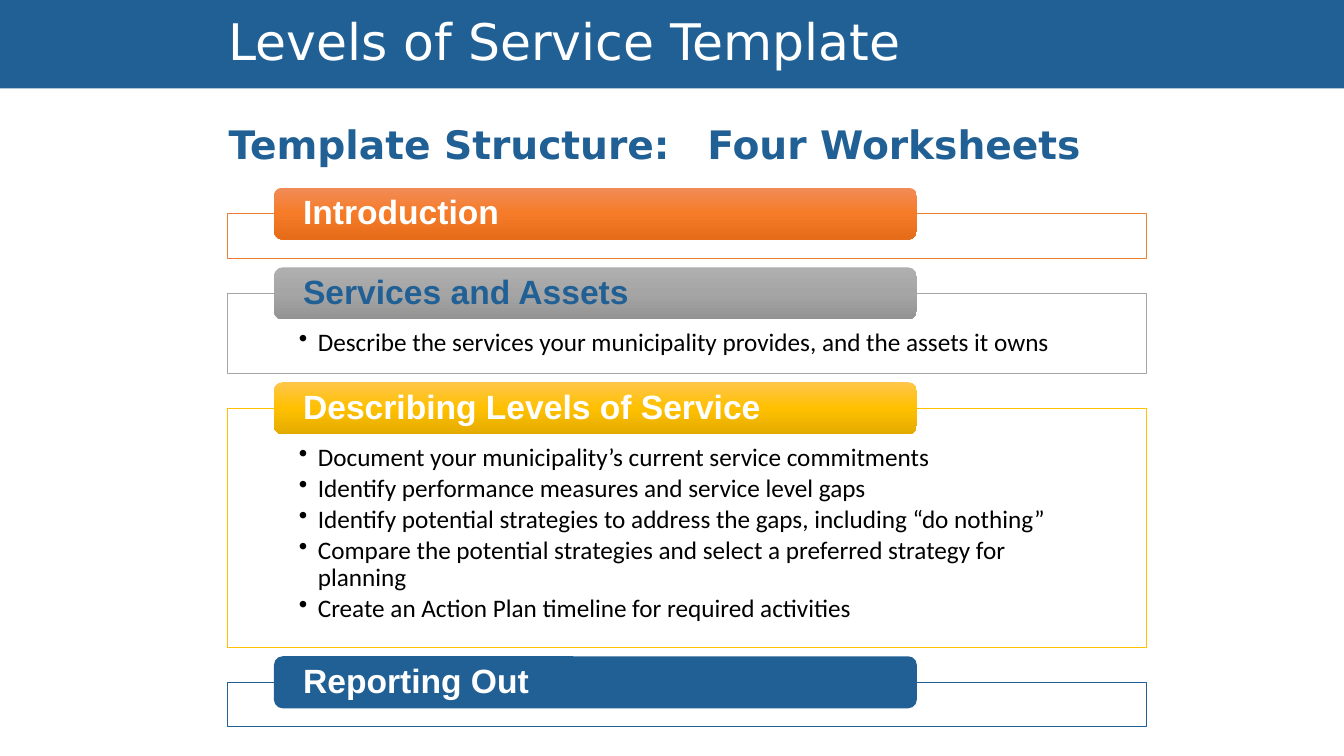
from copy import deepcopy
from dataclasses import dataclass

from lxml.etree import SubElement as Sub
from pptx import Presentation
from pptx.dml.color import RGBColor as RGB
from pptx.enum.shapes import MSO_SHAPE as Kind
from pptx.enum.text import MSO_ANCHOR as Anchor, PP_ALIGN as Align
from pptx.oxml.ns import qn
from pptx.util import Pt


@dataclass(frozen=True)
class Theme:
    blue: str = "216095"
    white: str = "FFFFFF"
    black: str = "000000"
    orange: str = "ED7D31"
    gray: str = "A5A5A5"
    gold: str = "FFC000"
    warm: tuple = ("F18C57", "F67B28", "E56C19")
    steel: tuple = ("AFAFAF", "A5A5A5", "939393")
    amber: tuple = ("FFC64B", "FFC000", "E3AB00")
    flat: tuple = ("216095",)
    title: int = 36
    head: int = 28
    label: int = 24
    body: int = 18
    wide: str = "DejaVu Sans"
    bold: str = "Arial"
    plain: str = "Calibri"


def write(shape, text, *, size, face, color, bold=False, anchor=Anchor.TOP,
          inset=(7.2, 3.6, 7.2, 3.6), after=0, bullet=None, hang=0, tab=None):
    frame = shape.text_frame
    frame.word_wrap = True
    frame.vertical_anchor = anchor
    left, top, right, low = map(Pt, inset)
    frame.margin_left, frame.margin_top = left, top
    frame.margin_right, frame.margin_bottom = right, low
    for i, line in enumerate(text.split("\n")):
        para = frame.add_paragraph() if i else frame.paragraphs[0]
        para.alignment = Align.LEFT
        para.line_spacing = 0.9
        para.space_after = Pt(after)
        props = para._p.get_or_add_pPr()
        if bullet:
            props.set("marL", str(Pt(hang)))
            props.set("indent", str(-Pt(hang)))
            Sub(props, qn("a:buChar"), char=bullet)
        if tab:
            stops = Sub(props, qn("a:tabLst"))
            Sub(stops, qn("a:tab"), pos=str(Pt(tab)), algn="l")
        run = para.add_run()
        run.text = line
        font = run.font
        font.name, font.size, font.bold = face, Pt(size), bold
        font.color.rgb = RGB.from_string(color)


class Deck:
    def __init__(self, theme):
        self.theme = theme
        self.file = Presentation()
        self.file.slide_width, self.file.slide_height = Pt(960), Pt(540)
        self.slide = self.file.slides.add_slide(self.file.slide_layouts[6])

    def shape(self, kind, box, fill, line=None, alpha=None):
        item = self.slide.shapes.add_shape(kind, *map(Pt, box))
        item.shadow.inherit = False
        if len(fill) == 1:
            item.fill.solid()
            item.fill.fore_color.rgb = RGB.from_string(fill[0])
        else:
            self.blend(item, fill)
        if alpha:
            tint = item._element.spPr.find(".//" + qn("a:srgbClr"))
            Sub(tint, qn("a:alpha"), val=str(alpha * 1000))
        if line:
            item.line.color.rgb = RGB.from_string(line)
            item.line.width = Pt(0.5)
        else:
            item.line.fill.background()
        return item

    def blend(self, item, fill):
        item.fill.gradient()
        item.fill.gradient_angle = 270
        stops = item._element.spPr.find(".//" + qn("a:gsLst"))
        stops.insert(1, deepcopy(stops[0]))
        for i, (stop, color) in enumerate(zip(item.fill.gradient_stops, fill)):
            stop.position = i / (len(fill) - 1)
            stop.color.rgb = RGB.from_string(color)

    def text(self, box, words, **form):
        item = self.slide.shapes.add_textbox(*map(Pt, box))
        write(item, words, **form)

    def panel(self, top, high, name, points, line, fill, ink):
        look = self.theme
        frame = self.shape(Kind.RECTANGLE, (162.6, top, 656, high),
                           (look.white,), line, alpha=90)
        if points:
            write(frame, points, size=look.body, face=look.plain,
                  color=look.black, inset=(51, 26, 51, 10),
                  after=2.7, bullet="•", hang=13.5)
        tab = self.shape(Kind.ROUNDED_RECTANGLE,
                         (195.7, top - 18.6, 459.2, 37.2), fill)
        write(tab, name, size=look.label, face=look.bold, color=ink,
              bold=True, anchor=Anchor.MIDDLE, inset=(19, 0, 19, 0))


def main():
    look = Theme()
    deck = Deck(look)
    deck.shape(Kind.RECTANGLE, (0, 0, 960, 63.2), (look.blue,))
    deck.text((156.2, 17, 631.4, 29.5), "Levels of Service Template",
              size=look.title, face=look.wide, color=look.white,
              anchor=Anchor.MIDDLE)
    deck.text((156.2, 86.4, 663, 54.7),
              "Template Structure:\tFour Worksheets", size=look.head,
              face=look.wide, color=look.blue, bold=True, tab=342)
    assets = ("Describe the services your municipality provides, "
              "and the assets it owns")
    levels = "\n".join((
        "Document your municipality’s current service commitments",
        "Identify performance measures and service level gaps",
        "Identify potential strategies to address the gaps, "
        "including “do nothing”",
        "Compare the potential strategies and select a preferred "
        "strategy for planning",
        "Create an Action Plan timeline for required activities",
    ))
    panels = (
        (31.8, "Introduction", "", look.orange, look.warm, look.white),
        (56.8, "Services and Assets", assets, look.gray, look.steel, look.blue),
        (170.6, "Describing Levels of Service", levels, look.gold, look.amber,
         look.white),
        (31.8, "Reporting Out", "", look.blue, look.flat, look.white),
    )
    top, gap = 152.6, 25.2
    for high, *rest in panels:
        deck.panel(top, high, *rest)
        top += high + gap
    deck.file.save("out.pptx")


if __name__ == "__main__":
    main()
